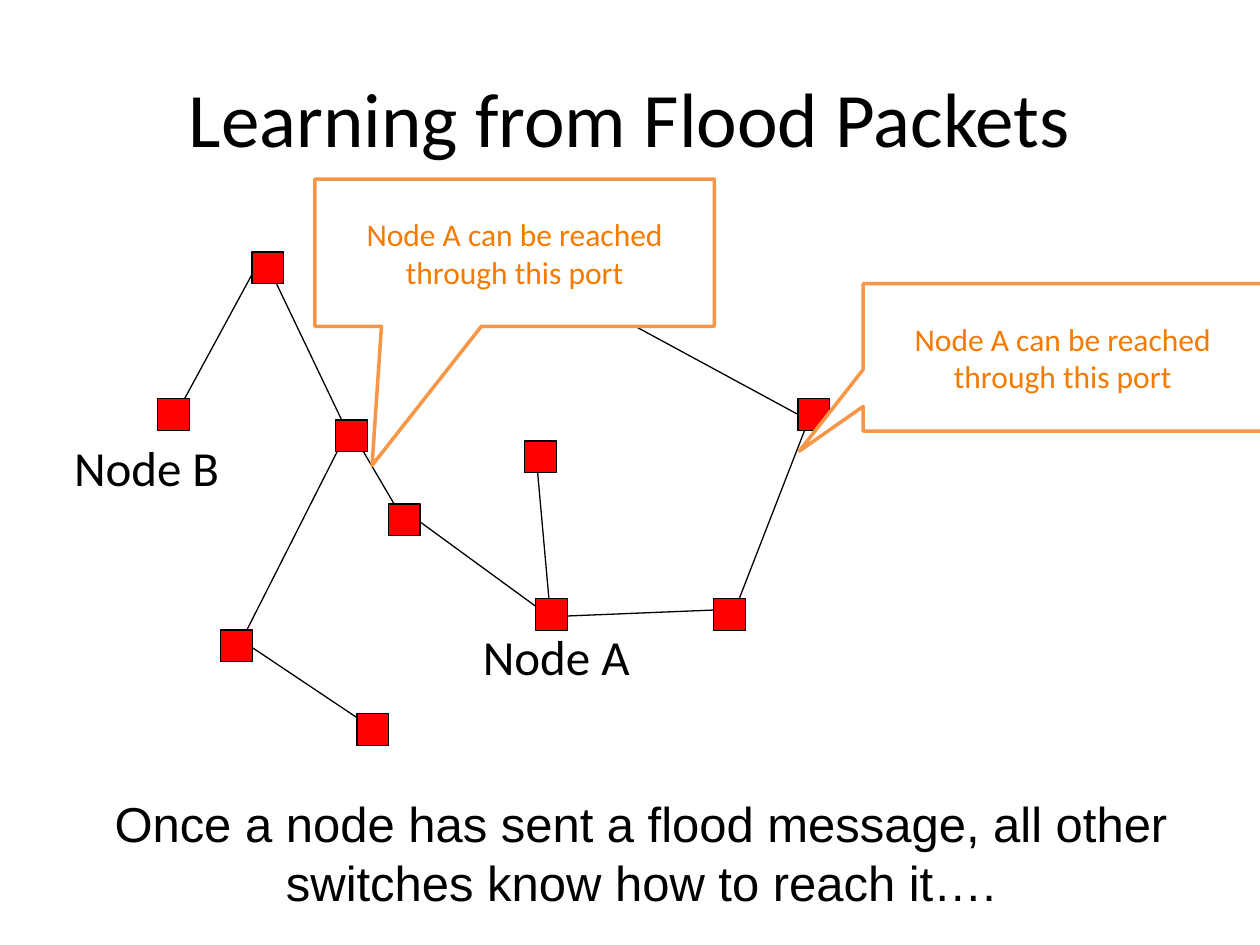
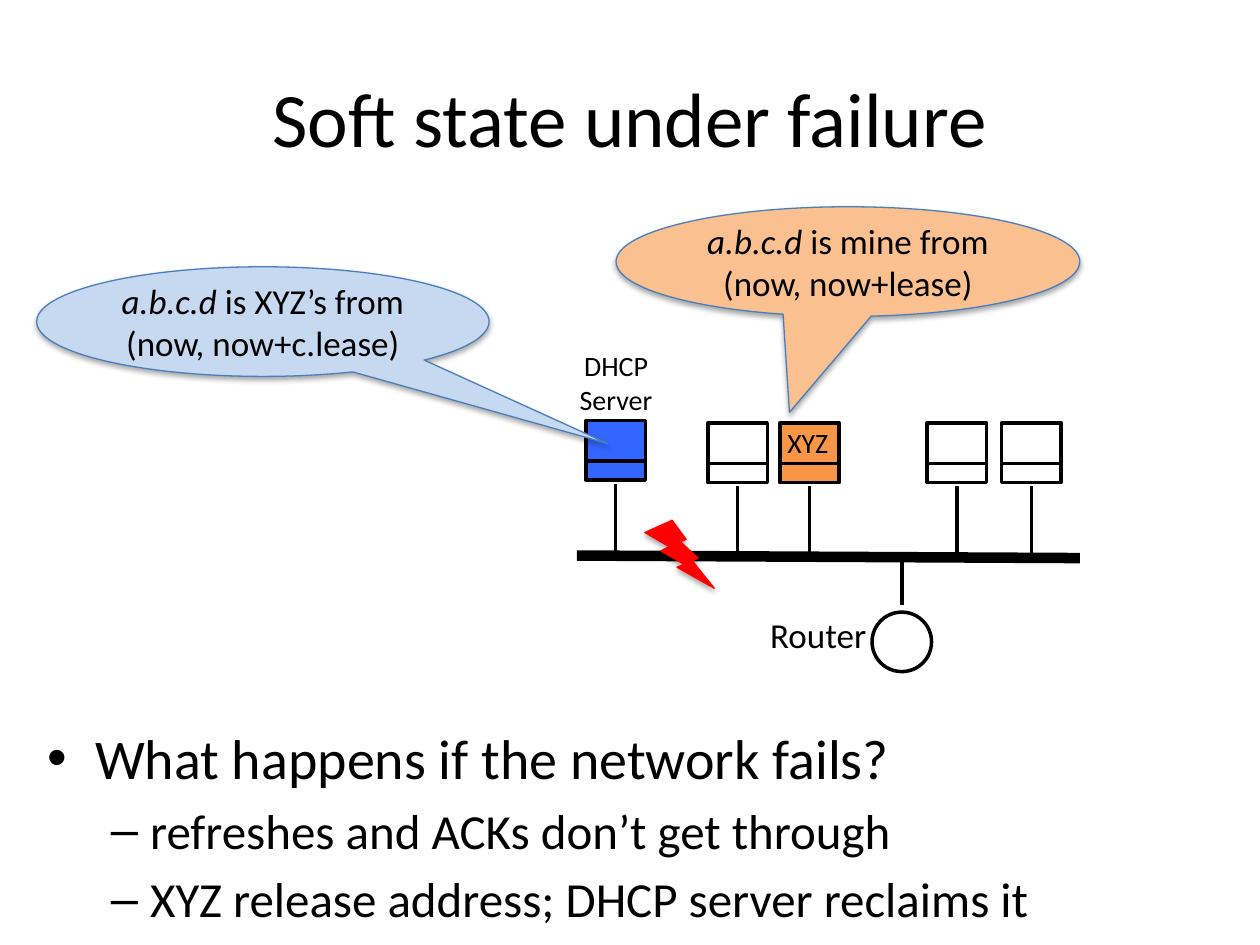
from dataclasses import dataclass

from lxml import etree
from pptx import Presentation
from pptx.dml.color import RGBColor
from pptx.enum.shapes import MSO_CONNECTOR, MSO_SHAPE
from pptx.enum.text import MSO_ANCHOR, MSO_AUTO_SIZE, PP_ALIGN
from pptx.oxml import parse_xml
from pptx.oxml.ns import qn
from pptx.util import Cm, Pt

RECTANGLE, OVAL = MSO_SHAPE.RECTANGLE, MSO_SHAPE.OVAL
BOLT = MSO_SHAPE.LIGHTNING_BOLT
RECT_CALLOUT = MSO_SHAPE.RECTANGULAR_CALLOUT
OVAL_CALLOUT = MSO_SHAPE.OVAL_CALLOUT
STRAIGHT = MSO_CONNECTOR.STRAIGHT
CENTER, MIDDLE = PP_ALIGN.CENTER, MSO_ANCHOR.MIDDLE
NO_AUTOFIT = MSO_AUTO_SIZE.NONE

BLACK, WHITE, RED = "000000", "FFFFFF", "FF0000"
ORANGE, ORANGE_TEXT, PEACH = "F79646", "F47A00", "FAC090"
BLUE, PALE_BLUE, BLUE_EDGE = "3366FF", "C6D9F1", "4B7EBC"
BODY_FONT = "Calibri"
TITLE_AND_CONTENT, TITLE_ONLY = 1, 5
SOFT_SHADOW = (
    '<a:effectLst xmlns:a="http://schemas.openxmlformats.org/drawingml/2006/main">'
    '<a:outerShdw blurRad="40000" dist="23000" dir="5400000" rotWithShape="0">'
    '<a:srgbClr val="000000"><a:alpha val="35000"/></a:srgbClr>'
    "</a:outerShdw></a:effectLst>"
)


@dataclass
class Area:
    """A rectangle in centimetres."""
    left: float
    top: float
    width: float
    height: float

    def lengths(self) -> tuple:
        return Cm(self.left), Cm(self.top), Cm(self.width), Cm(self.height)


@dataclass
class Look:
    fill: str
    line: str
    weight: float
    shadow: bool = False


@dataclass
class Label:
    area: Area
    text: str
    size: float
    font: str = BODY_FONT
    wrap: bool = True


@dataclass
class Callout:
    kind: int
    area: Area
    tip: tuple[float, float]
    look: Look
    text: str
    size: float
    color: str = BLACK
    subject: str = ""
    wrap: bool = True


@dataclass
class Host:
    left: float
    top: float = 8.53
    fill: str = WHITE


# Slide 1: switches and the links between them
SWITCH_SIZE = 0.64
SWITCH_LOOK = Look(RED, BLACK, 0.75)
SWITCHES = [
    (6.77, 8.47), (7.83, 10.16), (4.45, 12.7), (5.08, 5.08), (3.18, 8.04),
    (7.2, 14.39), (10.8, 12.07), (14.39, 12.07), (10.58, 8.89), (16.09, 8.04),
]
LINKS = [
    ((5.44, 5.44), (6.99, 8.68)),
    ((5.13, 5.44), (3.6, 8.26)),
    ((7.2, 8.89), (8.11, 10.44)),
    ((11.22, 5.72), (16.3, 8.47)),
    ((16.3, 8.47), (14.82, 12.28)),
    ((4.87, 12.91), (7.41, 14.61)),
    ((8.26, 10.37), (11.07, 12.42)),
    ((14.82, 12.28), (11.38, 12.42)),
    ((10.8, 9.1), (11.07, 12.12)),
    ((4.87, 12.91), (6.83, 9.04)),
]
PORT_LOOK = Look(WHITE, ORANGE, 2)
PORT_NOTES = [
    Callout(RECT_CALLOUT, Area(left, top, 8.05, 2.97), tip, PORT_LOOK,
            "Node A can be reached\nthrough this port", 18, ORANGE_TEXT, wrap=False)
    for left, top, tip in [(17.4, 5.72, (-0.66, 0.637)),
                           (6.35, 3.61, (-0.357, 1.444))]
]
FLOOD_LABELS = [
    Label(Area(7.62, 12.5, 7.19, 1.45), "Node A", 28),
    Label(Area(-0.64, 8.69, 7.19, 1.45), "Node B", 28),
    Label(Area(1.91, 15.88, 22.02, 2.64),
          "Once a node has sent a flood message, all other switches "
          "know how to reach it….", 28, "Arial"),
]

# Slide 2: hosts on a shared bus
HOST_SIZE = 1.2
HOSTS = [Host(11.81, 8.48, BLUE), Host(14.27), Host(15.72, fill=ORANGE),
         Host(18.69), Host(20.19)]
NETWORK_LABELS = [
    Label(Area(15.24, 12.24, 2.51, 1.09), "Router", 20, wrap=False),
    Label(Area(15.6, 8.46, 1.37, 0.94), "XYZ", 16, wrap=False),
    Label(Area(11.43, 6.91, 1.98, 1.63), "DHCP\nServer", 16, wrap=False),
]
LEASE_NOTES = [
    Callout(OVAL_CALLOUT, Area(12.42, 4.17, 9.35, 2.21), (-0.126, 1.375),
            Look(PEACH, BLUE_EDGE, 0.75, True),
            " is mine from (now, now+lease)", 20, subject="a.b.c.d"),
    Callout(OVAL_CALLOUT, Area(0.74, 5.38, 9.12, 2.21), (0.762, 1.111),
            Look(PALE_BLUE, BLUE_EDGE, 0.75, True),
            " is XYZ’s from (now, now+c.lease)", 20, subject="a.b.c.d"),
]
FAILURE_POINTS = [
    (0, "What happens if the network fails?"),
    (1, "refreshes and ACKs don’t get through"),
    (1, "XYZ release address; DHCP server reclaims it"),
]


def rgb(color: str) -> RGBColor:
    return RGBColor.from_string(color)


def format_para(para, size: float, color: str = BLACK, font: str = BODY_FONT) -> None:
    for span in para.runs:
        span.font.size = Pt(size)
        span.font.name = font
        span.font.color.rgb = rgb(color)


def place(shape, area: Area) -> None:
    shape.left, shape.top, shape.width, shape.height = area.lengths()


def add_page(deck, layout: int, title: str):
    page = deck.slides.add_slide(deck.slide_layouts[layout])
    heading = page.shapes.title
    place(heading, Area(1.27, 0.76, 22.86, 3.18))
    frame = heading.text_frame
    frame.text = title
    frame.vertical_anchor = MIDDLE
    frame.paragraphs[0].alignment = CENTER
    format_para(frame.paragraphs[0], 44)
    return page


def add_figure(page, kind: int, area: Area, look: Look):
    shape = page.shapes.add_shape(kind, *area.lengths())
    shape.fill.solid()
    shape.fill.fore_color.rgb = rgb(look.fill)
    shape.line.color.rgb = rgb(look.line)
    shape.line.width = Pt(look.weight)
    shape.shadow.inherit = False
    if look.shadow:
        effects = shape._element.spPr.find(qn("a:effectLst"))
        effects.getparent().replace(effects, parse_xml(SOFT_SHADOW))
    return shape


def add_line(page, start: tuple[float, float], end: tuple[float, float],
             weight: float) -> None:
    line = page.shapes.add_connector(STRAIGHT, *map(Cm, start + end))
    line.line.color.rgb = rgb(BLACK)
    line.line.width = Pt(weight)
    etree.SubElement(line._element.spPr, qn("a:effectLst"))


def add_label(page, label: Label) -> None:
    frame = page.shapes.add_textbox(*label.area.lengths()).text_frame
    frame.word_wrap = label.wrap
    frame.text = label.text
    for para in frame.paragraphs:
        para.alignment = CENTER
        format_para(para, label.size, font=label.font)


def add_callout(page, callout: Callout) -> None:
    shape = add_figure(page, callout.kind, callout.area, callout.look)
    shape.adjustments[0], shape.adjustments[1] = callout.tip
    frame = shape.text_frame
    frame.word_wrap = callout.wrap
    frame.vertical_anchor = MIDDLE
    frame.text = callout.subject or callout.text
    if callout.subject:
        para = frame.paragraphs[0]
        para.runs[0].font.italic = True
        para.add_run().text = callout.text
    for para in frame.paragraphs:
        para.alignment = CENTER
        format_para(para, callout.size, callout.color)


def add_host(page, host: Host) -> None:
    left, top, middle = host.left, host.top, host.left + HOST_SIZE / 2
    shelf = top + 0.81
    add_figure(page, RECTANGLE, Area(left, top, HOST_SIZE, HOST_SIZE),
               Look(host.fill, BLACK, 2))
    add_line(page, (left, shelf), (left + HOST_SIZE, shelf), 2)
    add_line(page, (middle, top + 1.27), (middle, top + 2.68), 2)


def build_flood_page(deck) -> None:
    page = add_page(deck, TITLE_ONLY, "Learning from Flood Packets")
    for start, end in LINKS:
        add_line(page, start, end, 0.75)
    for left, top in SWITCHES:
        add_figure(page, RECTANGLE, Area(left, top, SWITCH_SIZE, SWITCH_SIZE), SWITCH_LOOK)
    for note in PORT_NOTES:
        add_callout(page, note)
    for label in FLOOD_LABELS:
        add_label(page, label)


def build_failure_page(deck) -> None:
    page = add_page(deck, TITLE_AND_CONTENT, "Soft state under failure")

    # Bullets
    body = page.placeholders[1]
    place(body, Area(0.71, 14.45, 20.7, 4.29))
    frame = body.text_frame
    frame.auto_size = NO_AUTOFIT
    frame.text = "\n".join(text for _, text in FAILURE_POINTS)
    for para, (level, _) in zip(frame.paragraphs, FAILURE_POINTS):
        para.level = level
        format_para(para, 28 if level else 32)

    # Bus, hosts and router
    add_line(page, (11.63, 11.2), (21.77, 11.25), 6)
    for host in HOSTS:
        add_host(page, host)
    add_line(page, (18.18, 11.2), (18.18, 12.19), 2)
    add_figure(page, OVAL, Area(17.58, 12.34, HOST_SIZE, HOST_SIZE), Look(WHITE, BLACK, 2))

    # Labels, lease notes and the break in the bus
    for label in NETWORK_LABELS:
        add_label(page, label)
    for note in LEASE_NOTES:
        add_callout(page, note)
    add_figure(page, BOLT, Area(13, 10.49, 1.4, 1.37), Look(RED, RED, 0.75, True))


def main() -> None:
    deck = Presentation()
    deck.slide_width, deck.slide_height = Cm(25.4), Cm(19.05)
    build_flood_page(deck)
    build_failure_page(deck)
    deck.save("out.pptx")


if __name__ == "__main__":
    main()
